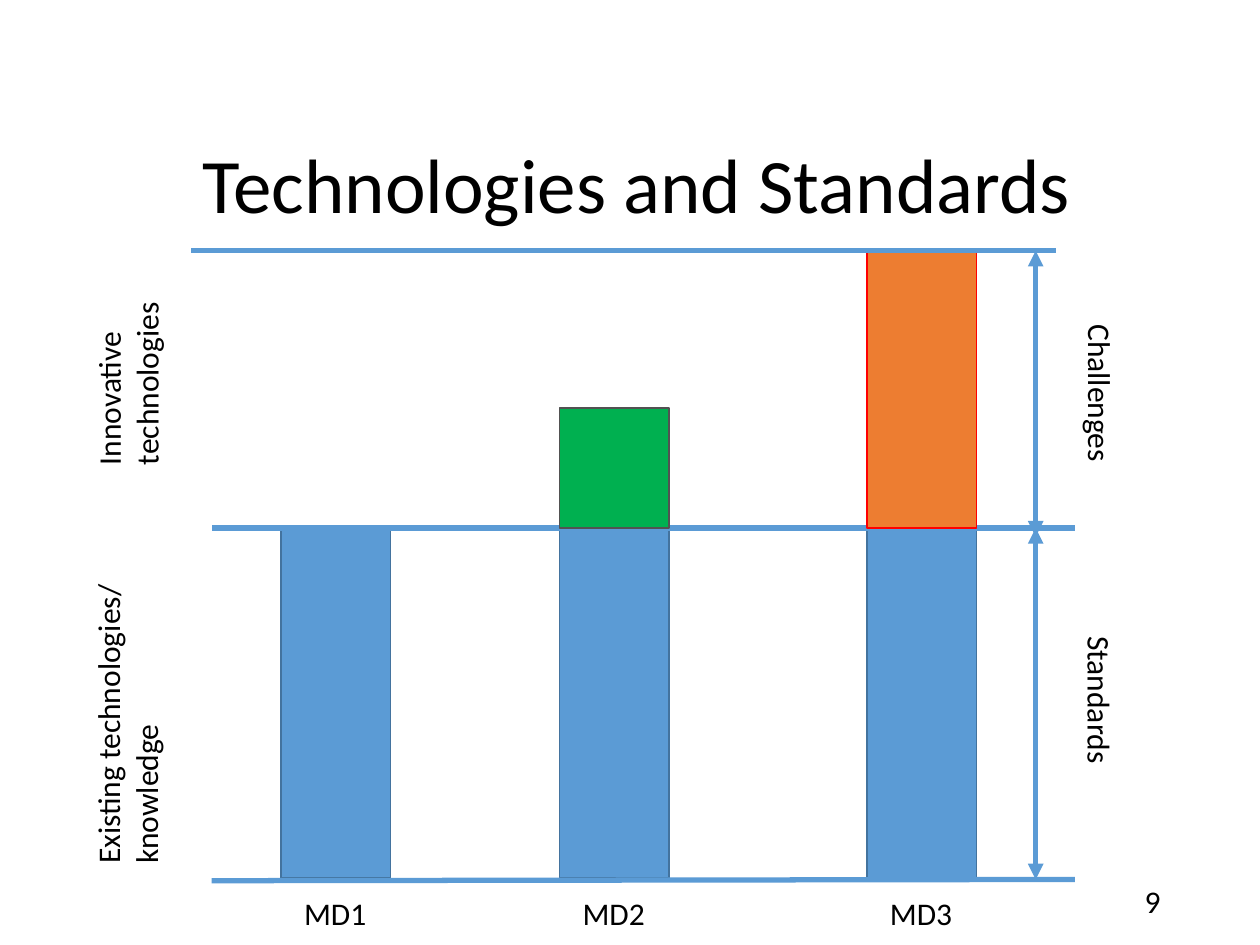
from lxml import etree
from pptx import Presentation
from pptx.dml.color import RGBColor
from pptx.enum.shapes import MSO_CONNECTOR, MSO_SHAPE
from pptx.enum.text import MSO_ANCHOR, PP_ALIGN
from pptx.oxml.ns import qn
from pptx.util import Inches, Pt

STRAIGHT = MSO_CONNECTOR.STRAIGHT
RECTANGLE = MSO_SHAPE.RECTANGLE
MIDDLE, TOP = MSO_ANCHOR.MIDDLE, MSO_ANCHOR.TOP
LEFT, RIGHT = PP_ALIGN.LEFT, PP_ALIGN.RIGHT

BLACK = RGBColor(0x00, 0x00, 0x00)
BLUE = RGBColor(0x5B, 0x9B, 0xD5)
DARK_BLUE = RGBColor(0x43, 0x73, 0x9E)
GREEN = RGBColor(0x00, 0xB0, 0x50)
GRAY = RGBColor(0x52, 0x52, 0x52)
ORANGE = RGBColor(0xED, 0x7D, 0x31)
RED = RGBColor(0xFF, 0x00, 0x00)

# Content
TITLE = "Technologies and Standards"
PAGE_NUMBER = "9"
COLUMNS = [("MD1", 2.23), ("MD2", 4.44), ("MD3", 6.88)]  # name, left
INNOVATIONS = [(4.44, 0.95, GREEN, GRAY), (6.88, 2.2, ORANGE, RED)]
SIDE_LABELS = [  # lines, left, top, width, height, rotation
    (["Existing technologies/", "knowledge"], -0.21, 5.38, 2.44, 0.71, 270),
    (["Innovative", "technologies"], 0.26, 2.68, 1.51, 0.71, 270),
    (["Standards"], 8.12, 5.36, 1.22, 0.4, 90),
    (["Challenges"], 8.08, 2.93, 1.31, 0.4, 90),
]

# Layout
BAR_WIDTH, BAR_TOP, BAR_HEIGHT = 0.87, 4.21, 2.76
LABEL_WIDTH, LABEL_TOP, LABEL_HEIGHT = 0.7, 7.05, 0.4
CEILING, MIDLINE, FLOOR = 1.99, 4.19, 6.98
ARROW_X = 8.22


def write(shape, lines, size=18, align=LEFT, anchor=TOP, wrap=False):
    frame = shape.text_frame
    frame.text = "\n".join(lines)
    margins = {"margin_left": 0.1, "margin_right": 0.1,
               "margin_top": 0.05, "margin_bottom": 0.05}
    for name, value in margins.items():
        setattr(frame, name, Inches(value))
    frame.word_wrap = wrap
    frame.vertical_anchor = anchor
    for para in frame.paragraphs:
        para.alignment = align
        for span in para.runs:
            for name, value in {"name": "Calibri", "size": Pt(size)}.items():
                setattr(span.font, name, value)
            span.font.color.rgb = BLACK


def add_label(page, lines, left, top, width, height, rotation=0, **style):
    box = page.shapes.add_textbox(*map(Inches, (left, top, width, height)))
    box.rotation = rotation
    write(box, lines, **style)


def add_bar(page, left, top, height, fill, outline):
    bar = page.shapes.add_shape(
        RECTANGLE, *map(Inches, (left, top, BAR_WIDTH, height)))
    bar.shadow.inherit = False
    bar.fill.solid()
    bar.fill.fore_color.rgb = fill
    bar.line.color.rgb = outline
    bar.line.width = Pt(1)


def add_line(page, start_x, start_y, end_x, end_y, arrows=False):
    line = page.shapes.add_connector(
        STRAIGHT, *map(Inches, (start_x, start_y, end_x, end_y)))
    line.line.color.rgb = BLUE
    line.line.width = Pt(3)
    if arrows:
        outline = line.line._get_or_add_ln()
        for end in ("a:headEnd", "a:tailEnd"):
            etree.SubElement(outline, qn(end), type="triangle")
    etree.SubElement(line._element.spPr, qn("a:effectLst"))


def main():
    deck = Presentation()
    deck.slide_width, deck.slide_height = Inches(10), Inches(7.5)
    page = deck.slides.add_slide(deck.slide_layouts[5])

    # Title
    title = page.shapes.title
    title.left, title.top = Inches(1.51), Inches(1.11)
    title.width, title.height = Inches(7.17), Inches(0.78)
    write(title, [TITLE], size=44, anchor=MIDDLE, wrap=True)
    title.text_frame.paragraphs[0].line_spacing = 0.9

    # Existing technology bars and their names
    for name, left in COLUMNS:
        add_bar(page, left, BAR_TOP, BAR_HEIGHT, BLUE, DARK_BLUE)
        label_left = left + (BAR_WIDTH - LABEL_WIDTH) / 2
        add_label(page, [name], label_left, LABEL_TOP, LABEL_WIDTH, LABEL_HEIGHT)

    # Floor and midline, with the innovations standing on the midline
    add_line(page, 8.53, FLOOR, 1.68, FLOOR + 0.01)
    add_line(page, 8.53, MIDLINE, 1.68, MIDLINE)
    for left, height, fill, outline in INNOVATIONS:
        add_bar(page, left, MIDLINE - height, height, fill, outline)

    # Ceiling and range arrows
    add_line(page, ARROW_X, MIDLINE, ARROW_X, FLOOR, arrows=True)
    add_line(page, 8.38, CEILING, 1.52, CEILING)
    add_line(page, ARROW_X, CEILING, ARROW_X, MIDLINE + 0.07, arrows=True)

    # Side labels and page number
    for label in SIDE_LABELS:
        add_label(page, *label)
    add_label(page, [PAGE_NUMBER], 7.06, 6.95, 2.25, 0.4, align=RIGHT, wrap=True)

    deck.save("out.pptx")


if __name__ == "__main__":
    main()
